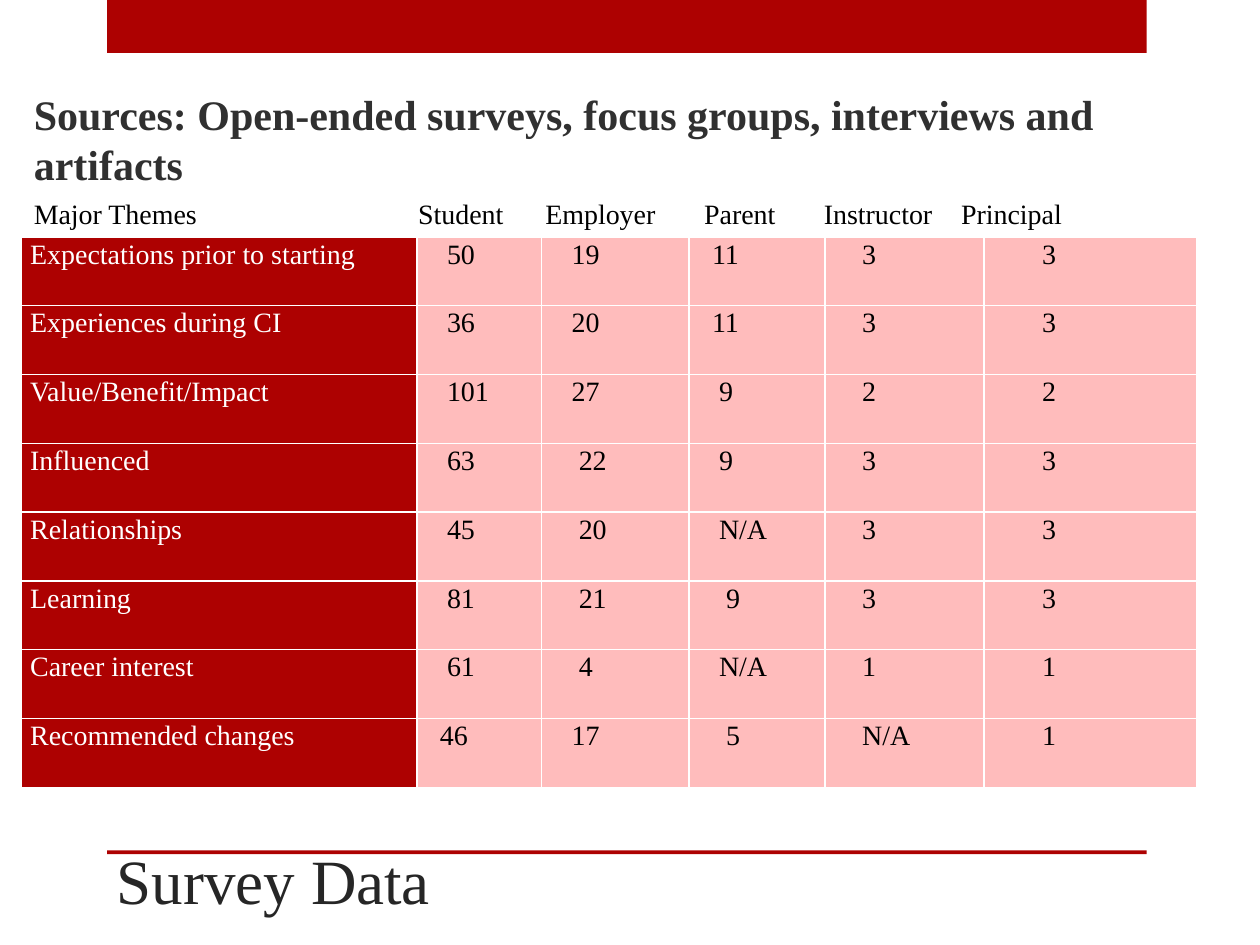
from lxml import etree
from pptx import Presentation, util as u
from pptx.dml.color import RGBColor
from pptx.enum import shapes, text
from pptx.oxml.ns import qn

FONT = "Times New Roman"
RED, PINK, WHITE, BLACK = "AD0101", "FFBCBC", "FFFFFF", "000000"
COLS, ROWS = 100, 75  # square grid over the whole slide
UNIT = u.Inches(10) // COLS
SPACE = 0.56  # width of one 16 pt space, in grid units

HEADINGS = ["Major Themes", "Student", "Employer", "Parent", "Instructor", "Principal"]
HEADING_TABS = [30.5, 40.6, 53.2, 62.7, 73.6]
COLUMN_WIDTHS = [31.4, 9.9, 11.7, 10.8, 12.6, 16.9]
COLUMN_SPACES = [0, 3, 3, 2, 4, 7]
THEMES = [
    ["Expectations prior to starting", "50", "19", "11", "3", "3"],
    ["Experiences during CI", "36", "20", "11", "3", "3"],
    ["Value/Benefit/Impact", "101", "27", "9", "2", "2"],
    ["Influenced", "63", "22", "9", "3", "3"],
    ["Relationships", "45", "20", "N/A", "3", "3"],
    ["Learning", "81", "21", "9", "3", "3"],
    ["Career interest", "61", "4", "N/A", "1", "1"],
    ["Recommended changes", "46", "17", "5", "N/A", "1"],
]
# Cells (row, column) set off from their column's indent, in spaces
SHIFTS = {(7, 1): -1, (3, 2): 1, (4, 2): 1, (5, 2): 1, (6, 2): 1,
          (2, 3): 1, (3, 3): 1, (4, 3): 1, (5, 3): 2, (6, 3): 1, (7, 3): 2}


def color(hex_string):
    return RGBColor.from_string(hex_string)


def grid(*units):
    return [round(n * UNIT) for n in units]


def write(tf, words, size=16, fill=BLACK, bold=False, spacing=None):
    p = tf.paragraphs[0]
    p.alignment = text.PP_ALIGN.LEFT
    p.line_spacing = spacing
    r = p.add_run()
    r.text = words
    r.font.name, r.font.size, r.font.bold = FONT, u.Pt(size), bold
    r.font.color.rgb = color(fill)
    return p


def add_bar(s, *box):
    sp = s.shapes.add_shape(shapes.MSO_SHAPE.RECTANGLE, *grid(*box))
    sp.shadow.inherit = False
    sp.fill.solid()
    sp.fill.fore_color.rgb = color(RED)
    sp.line.fill.background()


def add_text(s, box, words, anchor=text.MSO_ANCHOR.MIDDLE, **style):
    tf = s.shapes.add_textbox(*grid(*box)).text_frame
    tf.word_wrap = True
    tf.vertical_anchor = anchor
    return write(tf, words, **style)


def set_tabs(p, stops):
    tabs = etree.SubElement(p._p.get_or_add_pPr(), qn("a:tabLst"))
    for stop in grid(*stops):
        etree.SubElement(tabs, qn("a:tab"), pos=str(stop), algn="l")


def set_borders(cell, fill, width):
    tc_pr = cell._tc.get_or_add_tcPr()
    for i, side in enumerate(("lnL", "lnR", "lnT", "lnB")):
        ln = etree.Element(qn("a:" + side), w=str(u.Pt(width)))
        solid = etree.SubElement(ln, qn("a:solidFill"))
        etree.SubElement(solid, qn("a:srgbClr"), val=fill)
        tc_pr.insert(i, ln)


def fill_cell(cell, words, spaces, back, fore):
    cell.margin_left, cell.margin_right = grid(0.7 + spaces * SPACE, 0.7)
    cell.margin_top = cell.margin_bottom = 0
    cell.fill.solid()
    cell.fill.fore_color.rgb = color(back)
    write(cell.text_frame, words, fill=fore, spacing=1.07)
    set_borders(cell, WHITE, 1)


def add_theme_table(s, x, y, height):
    box = grid(x, y, sum(COLUMN_WIDTHS), height)
    table = s.shapes.add_table(len(THEMES), len(COLUMN_WIDTHS), *box).table
    table.first_row = table.horz_banding = False
    for column, width in zip(table.columns, grid(*COLUMN_WIDTHS)):
        column.width = width
    for i, row in enumerate(THEMES):
        for j, words in enumerate(row):
            spaces = COLUMN_SPACES[j] + SHIFTS.get((i, j), 0)
            back, fore = (PINK, BLACK) if j else (RED, WHITE)
            fill_cell(table.cell(i, j), words, spaces, back, fore)


def main():
    prs = Presentation()
    prs.slide_width, prs.slide_height = grid(COLS, ROWS)
    s = prs.slides.add_slide(prs.slide_layouts[6])
    add_bar(s, 8.5, 0, 82.5, 4.2)
    add_bar(s, 8.5, 67.5, 82.5, 0.3)
    add_text(s, (8.3, 63.8, 74.2, 9.5), "Survey Data",
             anchor=text.MSO_ANCHOR.BOTTOM, size=36, fill="262626")
    add_text(s, (1.7, 6.5, 95, 9),
             "Sources: Open-ended surveys, focus groups, interviews and artifacts",
             anchor=text.MSO_ANCHOR.TOP, size=24, fill="303030", bold=True)
    add_theme_table(s, 1.7, 18.8, 43.7)
    set_tabs(add_text(s, (1.7, 15.1, 95, 3.7), "\t".join(HEADINGS)), HEADING_TABS)
    prs.save("out.pptx")


if __name__ == "__main__":
    main()
